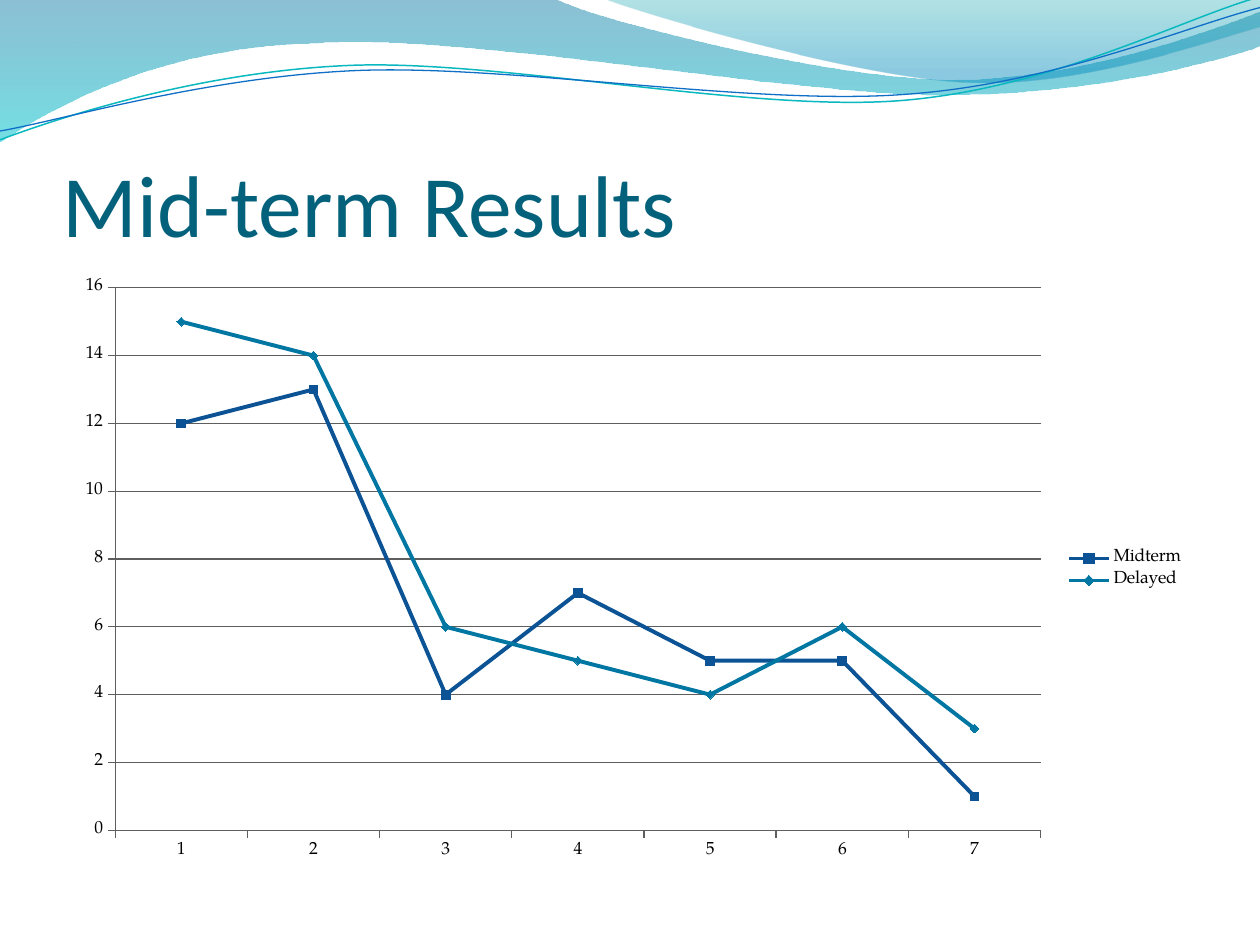
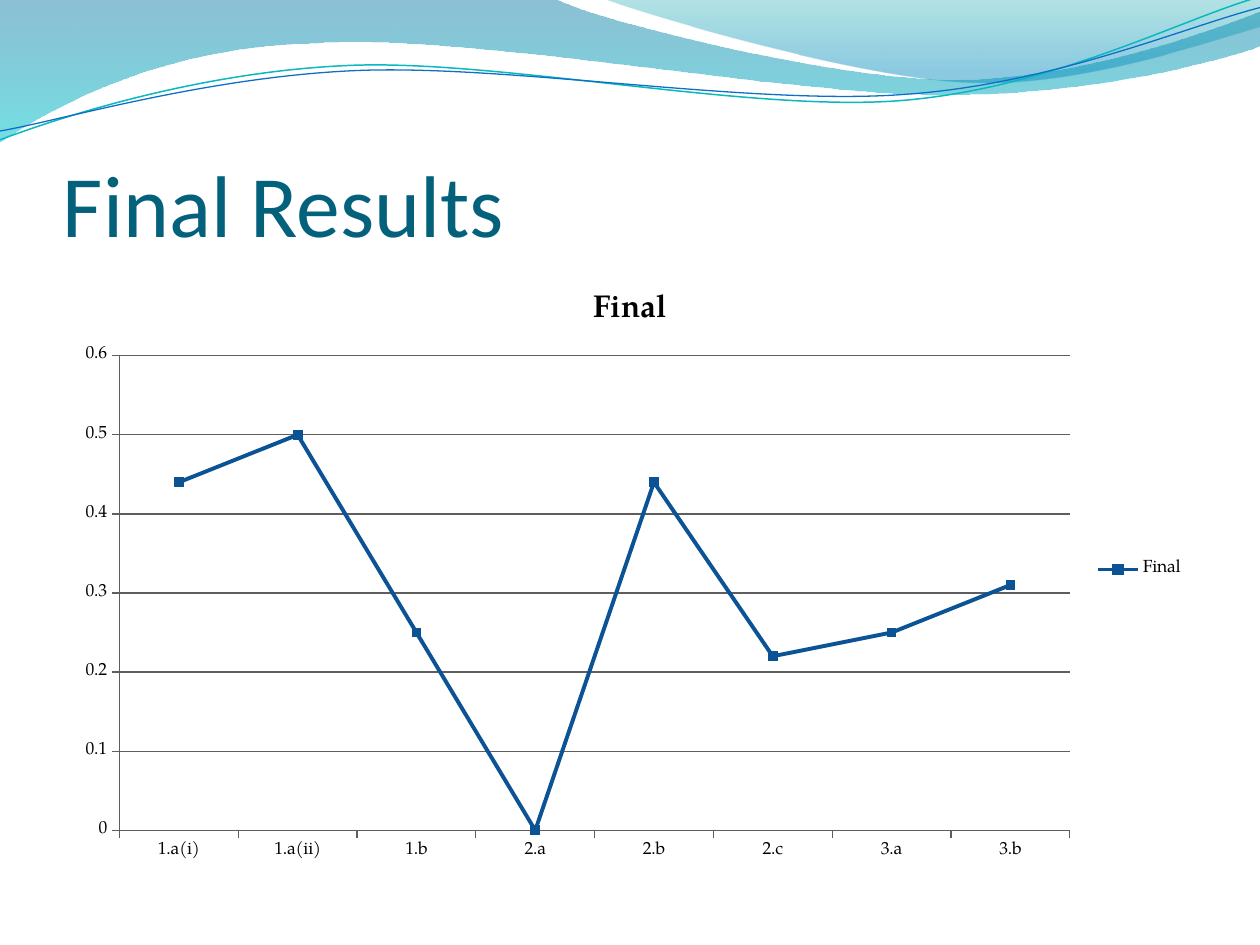
import math
from dataclasses import dataclass

import pptx
import pptx.chart.data
import pptx.dml.color
import pptx.enum.chart
import pptx.enum.text
import pptx.oxml
import pptx.oxml.ns
import pptx.util
from pptx.util import Inches


@dataclass(frozen=True)
class Theme:
    title_color: str = "04617B"
    text_color: str = "000000"
    grid_color: str = "5E5E5E"
    series_colors: tuple = ("0F6FC6", "009DD9")
    title_font: str = "Calibri"
    chart_font: str = "TeX Gyre Pagella"
    title_size: float = 50
    chart_title_size: float = 18
    chart_size: float = 10


THEME = Theme()
MARKERS = (pptx.enum.chart.XL_MARKER_STYLE.SQUARE,
           pptx.enum.chart.XL_MARKER_STYLE.DIAMOND)
STRAND_TILT = -2.7

# Filled waves: box, start, segments (2 numbers: line, 6: Bezier curve),
# gradient stops (position %, colour, opacity %)
BANDS = [
    ((-0.01, -0.01, 10.02, 1.14), (0, 0),
     [(4.4, -0.01), (4.76, 0.17, 6.64, 0.63, 7.58, 0.63),
      (8.53, 0.63, 9.58, 0.26, 10, 0.09), (10.01, 0.36),
      (9.83, 0.44, 8.7, 0.76, 7.46, 0.75),
      (6.22, 0.75, 3.82, 0.28, 2.57, 0.34),
      (1.29, 0.36, 0.46, 0.83, -0.01, 1.13), (0, 0)],
     [(0, "0074A1", 45), (100, "00C6CF", 55)]),
    ((4.79, -0.01, 5.21, 0.7), (4.79, -0.01),
     [(5.09, 0.11, 6.82, 0.62, 7.69, 0.65),
      (8.56, 0.69, 9.61, 0.32, 10, 0.21), (10, 0), (4.79, -0.01)],
     [(0, "00A1A9", 30), (80, "008BBF", 45)]),
]

# Outlined waves: box before tilting, start, segments, colour, width in points
STRANDS = [
    ((-0.02, 0.22, 10.02, 0.71), (0, 1.11),
     [(0.48, 0.93, 1.58, 0.57, 2.77, 0.52),
      (3.95, 0.47, 5.93, 0.89, 7.13, 0.8),
      (8.33, 0.71, 9.38, 0.15, 9.98, -0.02)], "0AB8BF", 0.85),
    ((-0.02, 0.3, 10.03, 0.58), (0, 1.04),
     [(0.47, 0.96, 1.64, 0.61, 2.83, 0.56),
      (4.03, 0.51, 5.97, 0.84, 7.17, 0.75),
      (8.36, 0.67, 9.41, 0.21, 10, 0.06)], "0F6FC6", 0.75),
]


def rgb(value):
    return pptx.dml.color.RGBColor.from_string(value)


def local_point(x, y, box, tilt):
    """Slide position as a point inside the untilted box, in EMU."""
    left, top, width, height = box
    dx, dy = x - left - width / 2, y - top - height / 2
    cos, sin = math.cos(math.radians(tilt)), math.sin(math.radians(tilt))
    return (Inches(dx * cos + dy * sin + width / 2),
            Inches(dy * cos - dx * sin + height / 2))


def add_wave(s, box, start, segments, close=False, tilt=0):
    """Freeform whose six-number segments become true Bezier curves."""
    builder = s.shapes.build_freeform(*map(Inches, start))
    builder.add_line_segments(
        [(Inches(seg[-2]), Inches(seg[-1])) for seg in segments], close=close)
    sp = builder.convert_to_shape()
    sp.left, sp.top, sp.width, sp.height = map(Inches, box)
    sp.rotation = tilt
    sp.shadow.inherit = False

    steps = [("moveTo", start)]
    steps += [("lnTo" if len(seg) == 2 else "cubicBezTo", seg) for seg in segments]
    steps_xml = ""
    for tag, seg in steps:
        points = [local_point(x, y, box, tilt) for x, y in zip(seg[::2], seg[1::2])]
        points_xml = "".join(f'<a:pt x="{x}" y="{y}"/>' for x, y in points)
        steps_xml += f"<a:{tag}>{points_xml}</a:{tag}>"
    if close:
        steps_xml += "<a:close/>"
    outline = pptx.oxml.parse_xml(
        f'<a:path {pptx.oxml.ns.nsdecls("a")} w="{sp.width}" h="{sp.height}">'
        f"{steps_xml}</a:path>")
    outlines = sp._element.spPr.find(".//" + pptx.oxml.ns.qn("a:pathLst"))
    outlines.replace(outlines[0], outline)
    return sp


def set_gradient(sp, stops):
    """Top-to-bottom gradient with transparent stops."""
    sp.fill.background()
    stops_xml = "".join(
        f'<a:gs pos="{pos * 1000}"><a:srgbClr val="{color}">'
        f'<a:alpha val="{alpha * 1000}"/></a:srgbClr></a:gs>'
        for pos, color, alpha in stops)
    grad = pptx.oxml.parse_xml(
        f'<a:gradFill {pptx.oxml.ns.nsdecls("a")} rotWithShape="1">'
        f'<a:gsLst>{stops_xml}</a:gsLst><a:lin ang="5400000" scaled="0"/></a:gradFill>')
    no_fill = sp._element.spPr.find(pptx.oxml.ns.qn("a:noFill"))
    sp._element.spPr.replace(no_fill, grad)


def add_header(s):
    for box, start, segments, stops in BANDS:
        sp = add_wave(s, box, start, segments, close=True)
        set_gradient(sp, stops)
        sp.line.fill.background()
    strands = []
    for box, start, segments, color, width in STRANDS:
        sp = add_wave(s, box, start, segments, tilt=STRAND_TILT)
        sp.fill.background()
        sp.line.color.rgb = rgb(color)
        sp.line.width = pptx.util.Pt(width)
        strands.append(sp)
    s.shapes.add_group_shape(strands)


def set_font(font, name, size, color, bold=False):
    font.name = name
    font.size = pptx.util.Pt(size)
    font.color.rgb = rgb(color)
    font.bold = bold


def add_title(s, text):
    sp = s.shapes.add_textbox(Inches(0.5), Inches(0.77), Inches(9), Inches(1.25))
    tf = sp.text_frame
    tf.word_wrap = True
    tf.vertical_anchor = pptx.enum.text.MSO_ANCHOR.BOTTOM
    tf.margin_left = tf.margin_right = tf.margin_bottom = 0
    tf.margin_top = Inches(0.05)
    tf.text = text
    set_font(tf.paragraphs[0].runs[0].font, THEME.title_font,
             THEME.title_size, THEME.title_color)


def style_series(series, color, marker):
    series.smooth = False
    series.marker.style = marker
    series.marker.size = 5
    series.format.line.width = pptx.util.Pt(2.25)
    series.marker.format.fill.solid()
    for target in (series.format.line.color, series.marker.format.fill.fore_color,
                   series.marker.format.line.color):
        target.rgb = rgb(color)
        target.brightness = -0.25


def style_axis(axis):
    axis.major_tick_mark = pptx.enum.chart.XL_TICK_MARK.OUTSIDE
    axis.minor_tick_mark = pptx.enum.chart.XL_TICK_MARK.NONE
    lines = [axis.format.line]
    if axis.has_major_gridlines:
        lines.append(axis.major_gridlines.format.line)
    for line in lines:
        line.color.rgb = rgb(THEME.grid_color)
        line.width = pptx.util.Pt(0.75)


def add_line_chart(s, categories, series, top, step, title=None):
    data = pptx.chart.data.CategoryChartData()
    data.categories = categories
    for name, values in series.items():
        data.add_series(name, values)
    chart = s.shapes.add_chart(
        pptx.enum.chart.XL_CHART_TYPE.LINE_MARKERS,
        Inches(0.5), Inches(2.12), Inches(9), Inches(4.8), data).chart
    set_font(chart.font, THEME.chart_font, THEME.chart_size, THEME.text_color)

    chart.has_title = title is not None
    if title:
        tf = chart.chart_title.text_frame
        tf.text = title
        set_font(tf.paragraphs[0].runs[0].font, THEME.chart_font,
                 THEME.chart_title_size, THEME.text_color, bold=True)
    chart.has_legend = True
    chart.legend.position = pptx.enum.chart.XL_LEGEND_POSITION.RIGHT
    chart.legend.include_in_layout = False

    value_axis = chart.value_axis
    value_axis.minimum_scale, value_axis.maximum_scale = 0, top
    value_axis.major_unit = step
    value_axis.has_major_gridlines = True
    for axis in (chart.category_axis, value_axis):
        style_axis(axis)
    chart.plots[0].vary_by_categories = False
    for item, color, marker in zip(chart.plots[0].series, THEME.series_colors, MARKERS):
        style_series(item, color, marker)


def add_slide(prs, title):
    s = prs.slides.add_slide(prs.slide_layouts[6])
    add_header(s)
    add_title(s, title)
    return s


def main():
    prs = pptx.Presentation()
    prs.slide_width, prs.slide_height = Inches(10), Inches(7.5)

    # Mid-term results
    s = add_slide(prs, "Mid-term Results")
    add_line_chart(s, [str(n) for n in range(1, 8)],
                   {"Midterm": (12, 13, 4, 7, 5, 5, 1),
                    "Delayed": (15, 14, 6, 5, 4, 6, 3)}, top=16, step=2)

    # Final results
    s = add_slide(prs, "Final Results")
    add_line_chart(s, ["1.a(i)", "1.a(ii)", "1.b", "2.a", "2.b", "2.c", "3.a", "3.b"],
                   {"Final": (0.44, 0.5, 0.25, 0, 0.44, 0.22, 0.25, 0.31)},
                   top=0.6, step=0.1, title="Final")

    prs.save("out.pptx")


if __name__ == "__main__":
    main()
